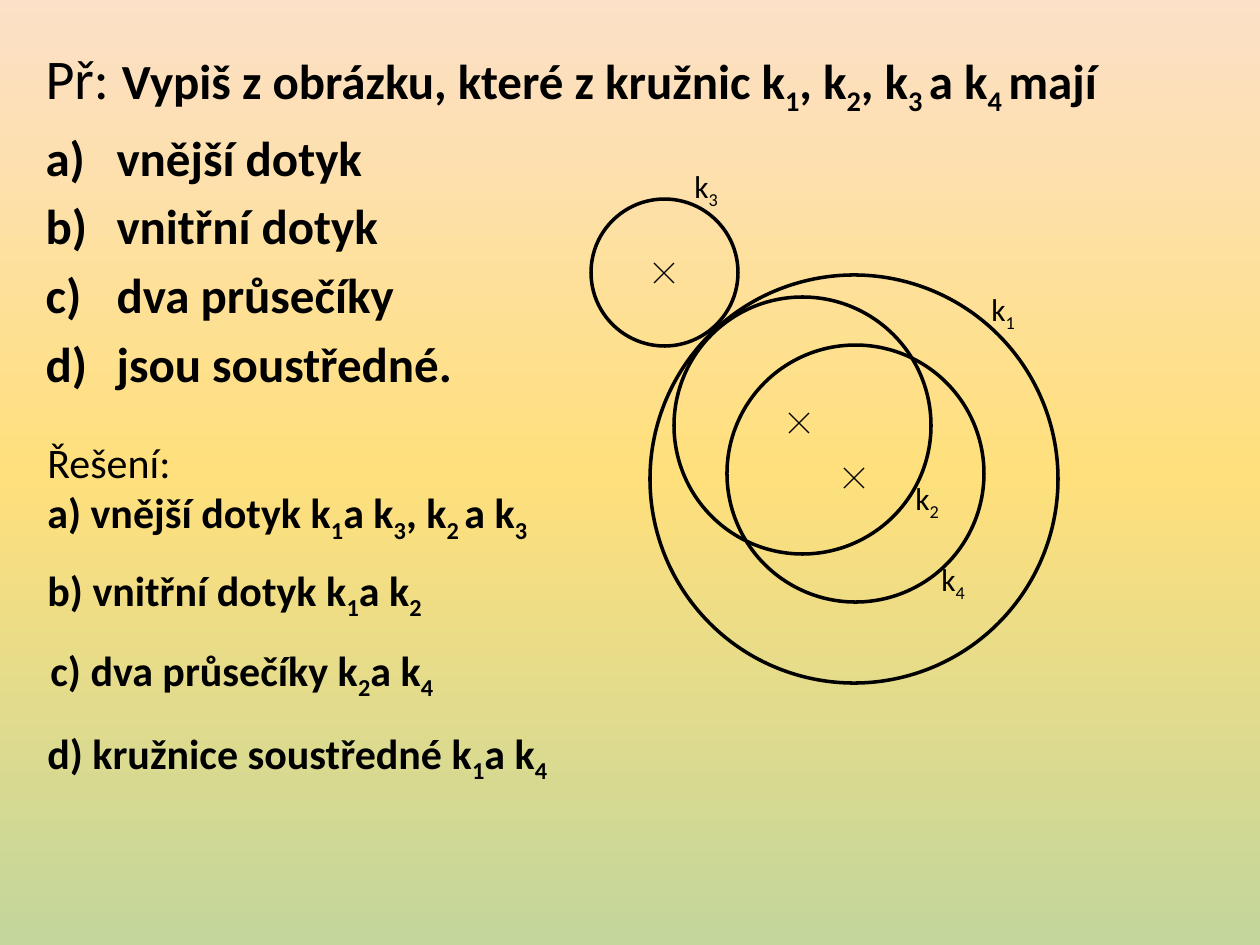
from dataclasses import dataclass

from lxml.etree import SubElement
from pptx import Presentation
from pptx.dml.color import RGBColor
from pptx.enum.shapes import MSO_CONNECTOR as Line, MSO_SHAPE as Shape
from pptx.enum.text import MSO_ANCHOR as Anchor, MSO_AUTO_SIZE as AutoSize
from pptx.oxml import parse_xml
from pptx.oxml.ns import nsdecls, qn
from pptx.util import Emu, Pt


@dataclass(frozen=True)
class Theme:
    font: str = "Calibri"
    ink: str = "000000"
    sky: tuple = ((0, "FCE0C8"), (50, "FFE07D"), (100, "C3D69B"))
    lead: int = 32
    task: int = 28
    answer: int = 24
    label: int = 18
    circle_line: float = 2
    cross_line: float = 0.75


THEME = Theme()
INK = RGBColor.from_string(THEME.ink)
PX_PER_INCH = 126


def px(length):
    return Emu(round(length * 914400 / PX_PER_INCH))


def add_runs(paragraph, text, size, bold=False):
    """Add text in which every second piece between bars is a subscript."""
    for index, piece in enumerate(text.split("|")):
        if not piece:
            continue
        run = paragraph.add_run()
        run.text = piece
        font = run.font
        font.name, font.size, font.bold = THEME.font, Pt(size), bold
        font.color.rgb = INK
        if index % 2:
            run._r.get_or_add_rPr().set("baseline", "-25000")


def add_text_box(parent, box, lines):
    """Place unwrapped lines, each given as (text, size, bold)."""
    frame = parent.add_textbox(*map(px, box)).text_frame
    frame.word_wrap = False
    frame.auto_size = AutoSize.SHAPE_TO_FIT_TEXT
    for index, line in enumerate(lines):
        paragraph = frame.add_paragraph() if index else frame.paragraphs[0]
        add_runs(paragraph, *line)


def paint_background(slide):
    stops = "".join(
        f'<a:gs pos="{position * 1000}"><a:srgbClr val="{colour}"/></a:gs>'
        for position, colour in THEME.sky)
    fill = slide.background.fill
    fill.gradient()
    fill.gradient_angle = 270
    gradient = slide._element.find(".//" + qn("a:gradFill"))
    gradient.replace(gradient.find(qn("a:gsLst")), parse_xml(
        f'<a:gsLst {nsdecls("a")}>{stops}</a:gsLst>'))


def set_indent(paragraph, indent, bullet, **attributes):
    properties = paragraph._p.get_or_add_pPr()
    properties.set("marL", str(px(indent)))
    properties.set("indent", str(-px(indent)))
    SubElement(properties, qn(bullet), **attributes)


def place_task(slide, box):
    """Question and its lettered list in the body placeholder."""
    body = slide.placeholders[1]
    body.left, body.top, body.width, body.height = map(px, box)
    frame = body.text_frame
    frame.auto_size = AutoSize.SHAPE_TO_FIT_TEXT
    frame.vertical_anchor = Anchor.TOP

    question = frame.paragraphs[0]
    add_runs(question, "Př: ", THEME.lead)
    add_runs(question, "Vypiš z obrázku, které z kružnic k|1|, k|2|, k|3 |a k|4 |mají",
             THEME.task, True)
    set_indent(question, 0, "a:buNone")

    for option in ("vnější dotyk", "vnitřní dotyk", "dva průsečíky",
                   "jsou soustředné."):
        paragraph = frame.add_paragraph()
        add_runs(paragraph, option, THEME.task, True)
        set_indent(paragraph, 71, "a:buAutoNum", type="alphaLcParenR")


def place_solution(slide, box):
    """Heading with the first answer, then one box per further answer."""
    left, top, width, height = box
    add_text_box(slide.shapes, (left, top, width, 115), [
        ("Řešení:", THEME.answer),
        ("a) vnější dotyk k|1|a k|3|, k|2 |a k|3|", THEME.answer, True)])
    row_height = 63
    for x, y, row_width, answer in (
            (0, 128, 407, "b) vnitřní dotyk k|1|a k|2|"),
            (3, 208, 420, "c) dva průsečíky k|2|a k|4|"),
            (0, height - row_height, 528, "d) kružnice soustředné k|1|a k|4|")):
        add_text_box(slide.shapes, (left + x, top + y, row_width, row_height),
                     [(answer, THEME.answer, True)])


def add_cross(slide, x, y, half=10):
    """Mark a centre with two grouped strokes."""
    cross = slide.shapes.add_group_shape()
    for side in (-half, half):
        stroke = cross.shapes.add_connector(
            Line.STRAIGHT, px(x + side), px(y - half), px(x - side), px(y + half))
        stroke.line.color.rgb = INK
        stroke.line.width = Pt(THEME.cross_line)
        SubElement(stroke._element.spPr, qn("a:effectLst"))


def place_circles(slide, origin):
    """Circles with their labels and centre marks, relative to the origin."""
    left, top = origin
    # number, circle x, y, diameter, label x, y
    for number, x, y, diameter, label_x, label_y in (
            (1, 59, 114, 408, 388, 123),
            (2, 83, 136, 257, 312, 312),
            (3, 0, 38, 147, 91, 0),
            (4, 136, 184, 257, 338, 393)):
        circle = slide.shapes.add_shape(
            Shape.OVAL, px(left + x), px(top + y), px(diameter), px(diameter))
        circle.shadow.inherit = False
        circle.fill.background()
        circle.line.color.rgb = INK
        circle.line.width = Pt(THEME.circle_line)
        add_text_box(slide.shapes, (left + label_x, top + label_y, 50, 50),
                     [(f"k|{number}|", THEME.label)])

    # k1 and k4 share one centre
    for x, y in ((263, 317), (208, 262), (73, 112)):
        add_cross(slide, left + x, top + y)


def main():
    deck = Presentation()
    deck.slide_width, deck.slide_height = px(1260), px(945)
    slide = deck.slides.add_slide(deck.slide_layouts[1])
    title = slide.shapes.title._element
    title.getparent().remove(title)

    paint_background(slide)
    place_task(slide, (33, 37, 1206, 365))
    place_solution(slide, (35, 430, 528, 354))
    place_circles(slide, (591, 161))
    deck.save("out.pptx")


if __name__ == "__main__":
    main()
